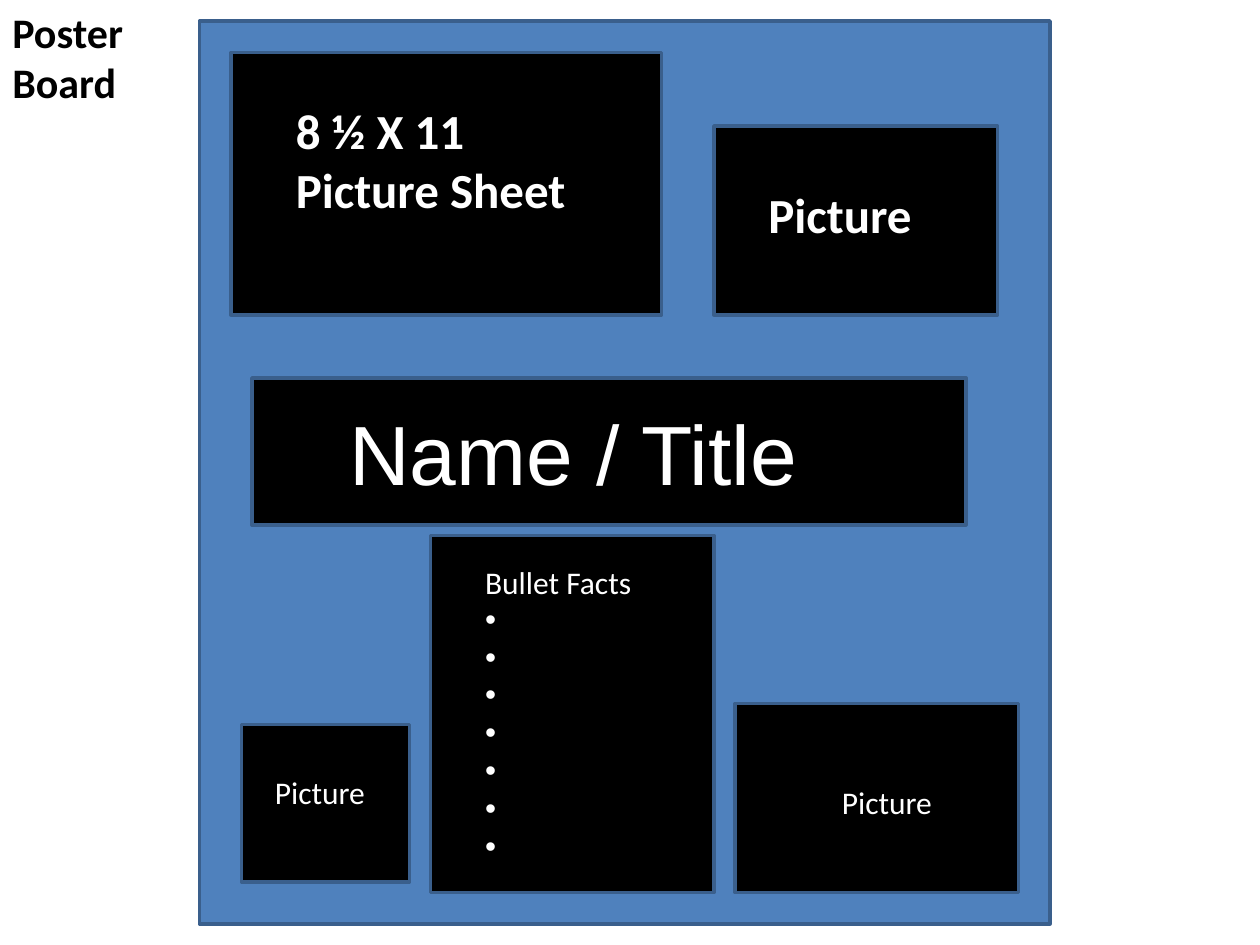
from pptx import Presentation
from pptx.dml.color import RGBColor
from pptx.enum.shapes import MSO_SHAPE
from pptx.enum.text import MSO_ANCHOR, MSO_AUTO_SIZE, PP_ALIGN
from pptx.oxml.ns import qn
from pptx.util import Inches, Pt
from lxml.etree import SubElement

COLS, ROWS = 120, 90
WIDE, HIGH = Inches(10), Inches(7.5)
HUES = {"board": "4F81BD", "edge": "3A5F8C", "card": "000000",
        "light": "FFFFFF", "dark": "000000"}
FACTS = 7


def hue(name):
    return RGBColor.from_string(HUES[name])


def area(col, row, cols, rows):
    return (int(WIDE * col / COLS), int(HIGH * row / ROWS),
            int(WIDE * cols / COLS), int(HIGH * rows / ROWS))


def place(shape, cell):
    shape.left, shape.top, shape.width, shape.height = area(*cell)


def paint(shape, fill):
    shape.fill.solid()
    shape.fill.fore_color.rgb = hue(fill)
    shape.line.color.rgb = hue("edge")
    shape.line.width = Pt(2)


def style(par, size, ink="light", face="Calibri", bold=False):
    par.alignment = PP_ALIGN.LEFT
    par.space_before = Pt(0)
    font = par.font
    font.name, font.size, font.bold = face, Pt(size), bold
    font.color.rgb = hue(ink)


def panel(slide, cell, fill="card"):
    rect = slide.shapes.add_shape(MSO_SHAPE.RECTANGLE, *area(*cell))
    rect.shadow.inherit = False
    paint(rect, fill)


def label(slide, cell, lines, size, ink="light", bold=False, wrap=True):
    frame = slide.shapes.add_textbox(*area(*cell)).text_frame
    frame.word_wrap = wrap
    frame.text = "\n".join(lines)
    for par in frame.paragraphs:
        style(par, size, ink, bold=bold)


def banner(slide, cell, text):
    title = slide.shapes.title
    place(title, cell)
    paint(title, "card")
    frame = title.text_frame
    frame.auto_size = MSO_AUTO_SIZE.NONE
    frame.vertical_anchor = MSO_ANCHOR.MIDDLE
    frame.margin_left = Inches(0.77)
    frame.text = text
    style(frame.paragraphs[0], 48, face="Arial")
    slide.shapes._spTree.append(title._element)


def bullet(par, mark):
    props = par._p.get_or_add_pPr()
    props.set("marL", "0")
    props.set("indent", "0")
    if mark:
        SubElement(props, qn("a:buFont")).set("typeface", "Arial")
        SubElement(props, qn("a:buChar")).set("char", mark)
    else:
        SubElement(props, qn("a:buNone"))


def facts(slide, cell, head, count):
    body = slide.placeholders[1]
    place(body, cell)
    frame = body.text_frame
    frame.auto_size = MSO_AUTO_SIZE.NONE
    frame.word_wrap = False
    frame.text = "\n".join([head] + [" "] * count)
    for num, par in enumerate(frame.paragraphs):
        style(par, 18)
        bullet(par, "•" if num else None)
    slide.shapes._spTree.append(body._element)


def main():
    deck = Presentation()
    deck.slide_width, deck.slide_height = WIDE, HIGH
    slide = deck.slides.add_slide(deck.slide_layouts[1])

    panel(slide, (19, 2, 81, 86), "board")
    cards = [(22, 5, 41, 25), (68, 12, 27, 18), (23, 69, 16, 15),
             (41, 51, 27, 34), (70, 67, 27, 18)]
    for cell in cards:
        panel(slide, cell)

    banner(slide, (24, 36, 68, 14), "Name / Title")
    facts(slide, (45, 53, 16.5, 34), "Bullet Facts", FACTS)

    label(slide, (27, 9, 31, 12.5), ["8 ½ X 11 Picture Sheet"], 28, bold=True)
    label(slide, (72, 17, 20, 7), ["Picture"], 28, bold=True)
    label(slide, (25, 73, 13, 5), ["Picture"], 18)
    label(slide, (79, 74, 11, 5), ["Picture"], 18, wrap=False)
    label(slide, (0, 0, 18, 11), ["Poster", "Board"], 24, "dark", bold=True)

    deck.save("out.pptx")


if __name__ == "__main__":
    main()
